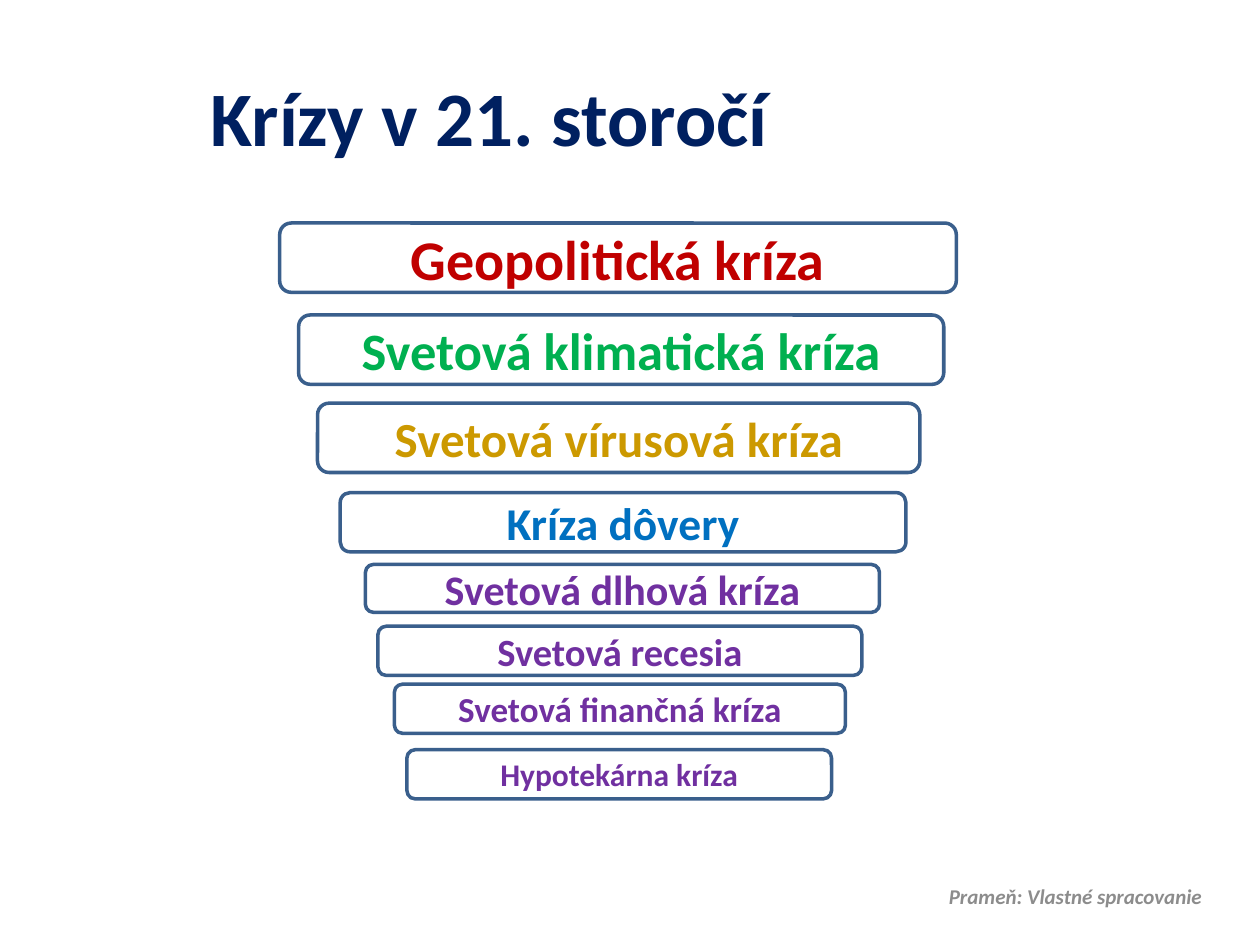
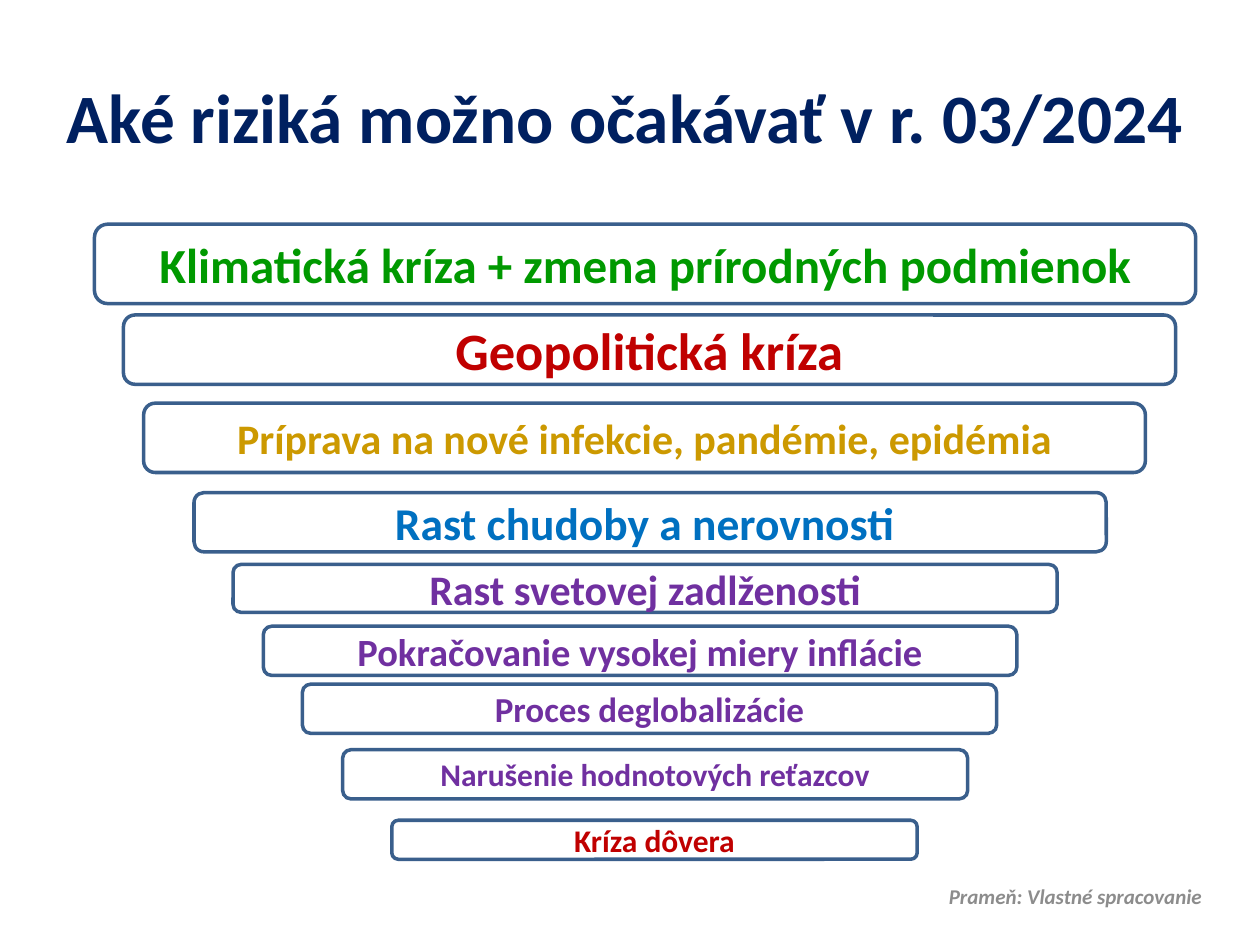
import pptx
import pptx.dml.color
import pptx.enum.shapes
import pptx.enum.text
import pptx.util

Inches = pptx.util.Inches
RGBColor = pptx.dml.color.RGBColor
ALIGN = pptx.enum.text.PP_ALIGN
MIDDLE = pptx.enum.text.MSO_ANCHOR.MIDDLE

NAVY = RGBColor(0x00, 0x20, 0x60)
OUTLINE = RGBColor(0x3A, 0x5F, 0x8C)
GREY = RGBColor(0x8C, 0x8C, 0x8C)
RED = RGBColor(0xC0, 0x00, 0x00)
GREEN = RGBColor(0x00, 0xB0, 0x50)
DARK_GREEN = RGBColor(0x00, 0x99, 0x00)
GOLD = RGBColor(0xCC, 0x99, 0x00)
BLUE = RGBColor(0x00, 0x70, 0xC0)
PURPLE = RGBColor(0x70, 0x30, 0xA0)

FONT = "Calibri"
SOURCE = "Prameň: Vlastné spracovanie"

# Top and height of the funnel rows below the first one, same on both slides
LOWER_ROWS = [(2.5, 0.55), (3.2, 0.55), (3.91, 0.47), (4.48, 0.38),
              (4.97, 0.39), (5.43, 0.39), (5.95, 0.39), (6.51, 0.31)]

# Each bar: left, width, text, text size, text colour
CRISES = [
    (2.22, 5.37, "Geopolitická kríza", 32, RED),
    (2.37, 5.12, "Svetová klimatická kríza", 30, GREEN),
    (2.52, 4.78, "Svetová vírusová kríza", 28, GOLD),
    (2.7, 4.49, "Kríza dôvery", 26, BLUE),
    (2.9, 4.08, "Svetová dlhová kríza", 24, PURPLE),
    (3, 3.84, "Svetová recesia", 22, PURPLE),
    (3.13, 3.58, "Svetová finančná kríza", 20, PURPLE),
    (3.23, 3.37, "Hypotekárna kríza", 18, PURPLE),
]
RISKS = [
    (0.75, 8.74, "Klimatická kríza + zmena prírodných podmienok", 28, DARK_GREEN),
    (0.98, 8.35, "Geopolitická kríza", 30, RED),
    (1.14, 7.95, "Príprava na nové infekcie, pandémie, epidémia", 24, GOLD),
    (1.54, 7.24, "Rast chudoby a nerovnosti ", 26, BLUE),
    (1.85, 6.54, "Rast svetovej zadlženosti", 24, PURPLE),
    (2.09, 5.98, "Pokračovanie vysokej miery inflácie", 22, PURPLE),
    (2.4, 5.51, "Proces deglobalizácie", 20, PURPLE),
    (2.72, 4.96, "Narušenie hodnotových reťazcov", 18, PURPLE),
    (3.11, 4.17, "Kríza dôvera", 18, RED),
]


def write(shape, text, size, color, align, italic=False):
    """Put one bold, vertically centred line of text into a shape."""
    frame = shape.text_frame
    frame.word_wrap = True
    frame.auto_size = pptx.enum.text.MSO_AUTO_SIZE.NONE
    frame.vertical_anchor = MIDDLE
    para = frame.paragraphs[0]
    para.alignment = align
    span = para.add_run()
    span.text = text
    style = {"name": FONT, "size": pptx.util.Pt(size), "bold": True, "italic": italic}
    for name, value in style.items():
        setattr(span.font, name, value)
    span.font.color.rgb = color


def add_title(page, text, left, width, size):
    title = page.shapes.title
    place = {"left": left, "top": 0.29, "width": width, "height": 1.25}
    for name, value in place.items():
        setattr(title, name, Inches(value))
    write(title, text, size, NAVY, ALIGN.LEFT)


def add_source(page):
    box = page.shapes.add_textbox(Inches(3.81), Inches(6.91), Inches(5.83), Inches(0.4))
    write(box, SOURCE, 12, GREY, ALIGN.RIGHT, italic=True)


def add_bar(page, left, top, width, height, text, size, color):
    bar = page.shapes.add_shape(
        pptx.enum.shapes.MSO_SHAPE.ROUNDED_RECTANGLE,
        Inches(left), Inches(top), Inches(width), Inches(height))
    bar.shadow.inherit = False
    bar.fill.background()
    bar.line.color.rgb = OUTLINE
    bar.line.width = pptx.util.Pt(2)
    write(bar, text, size, color, ALIGN.CENTER)


def add_funnel(page, bars, first_row):
    for (left, width, *label), (top, height) in zip(bars, [first_row] + LOWER_ROWS):
        add_bar(page, left, top, width, height, *label)


def add_funnel_page(deck, title, bars, first_row):
    page = deck.slides.add_slide(deck.slide_layouts[5])
    add_title(page, *title)
    add_source(page)
    add_funnel(page, bars, first_row)


def main():
    deck = pptx.Presentation()
    deck.slide_width, deck.slide_height = Inches(10), Inches(7.5)
    add_funnel_page(deck, ("Krízy v 21. storočí", 1.57, 6.75, 44),
                    CRISES, (1.77, 0.55))
    add_funnel_page(deck, ("Aké riziká možno očakávať v r. 03/2024", 0.43, 9.29, 39.6),
                    RISKS, (1.78, 0.63))
    deck.save("out.pptx")


if __name__ == "__main__":
    main()
